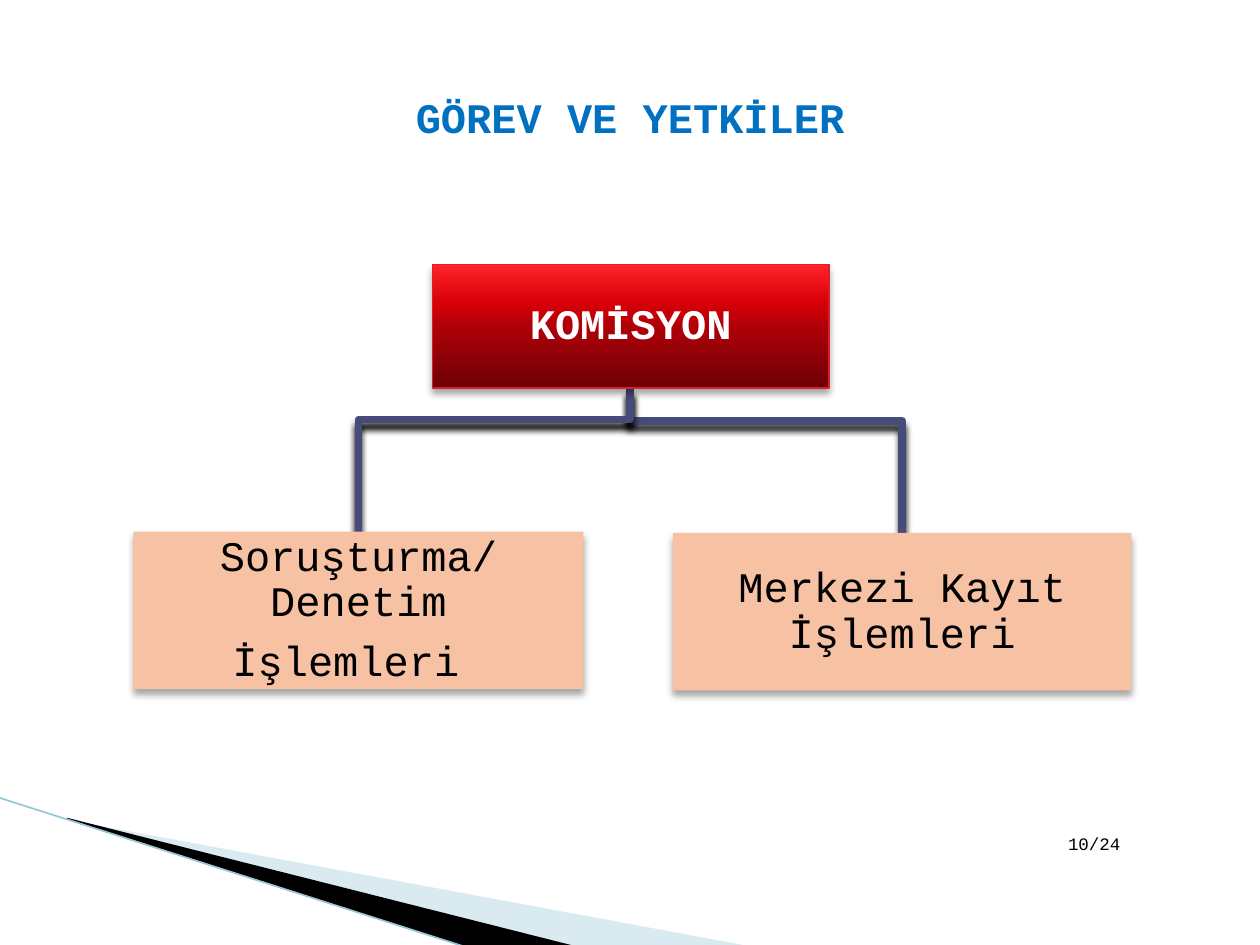
from dataclasses import dataclass

from lxml import etree
from pptx import Presentation
from pptx.dml.color import RGBColor
from pptx.enum.shapes import MSO_CONNECTOR, MSO_SHAPE
from pptx.enum.text import MSO_ANCHOR, PP_ALIGN
from pptx.oxml.ns import qn
from pptx.util import Inches, Pt

RECTANGLE = MSO_SHAPE.RECTANGLE
STRAIGHT = MSO_CONNECTOR.STRAIGHT
MIDDLE, BOTTOM = MSO_ANCHOR.MIDDLE, MSO_ANCHOR.BOTTOM
CENTER, RIGHT = PP_ALIGN.CENTER, PP_ALIGN.RIGHT
WIDTH, HEIGHT = Inches(10), Inches(7.5)


@dataclass(frozen=True)
class Theme:
    font: str = "Courier New"
    heading_size: int = 24
    number_size: int = 10
    ink: str = "000000"
    white: str = "FFFFFF"
    title: str = "0070C0"
    branch: str = "474B78"
    unit: str = "F7C1A4"
    root_edge: str = "DA1F28"
    root_stops: tuple = ((0, "6D0005"), (50, "B00008"), (70, "DA0008"), (100, "FF2429"))
    pale_wave: str = "A0CBDC"
    wave_edge: str = "97C5D8"


THEME = Theme()


def across(percent):
    return round(WIDTH * percent / 100)


def down(percent):
    return round(HEIGHT * percent / 100)


def place(left, top, width, height):
    return across(left), down(top), across(width), down(height)


def add_color(parent, color, alpha=100):
    node = etree.SubElement(parent, qn("a:srgbClr"), val=color)
    if alpha < 100:
        etree.SubElement(node, qn("a:alpha"), val=str(alpha * 1000))


def set_shadow(shape, alpha, distance):
    shape.shadow.inherit = False
    effects = shape._element.spPr.find(qn("a:effectLst"))
    shadow = etree.SubElement(
        effects, qn("a:outerShdw"), blurRad=str(Pt(4)), dist=str(Pt(distance)),
        dir="5400000", rotWithShape="0")
    add_color(shadow, THEME.ink, alpha)


def set_gradient(shape, stops):
    shape.fill.gradient()
    shape.fill.gradient_angle = 90
    stop_list = shape._element.spPr.find(qn("a:gradFill")).find(qn("a:gsLst"))
    for old_stop in list(stop_list):
        stop_list.remove(old_stop)
    for position, color in stops:
        stop = etree.SubElement(stop_list, qn("a:gs"), pos=str(position * 1000))
        add_color(stop, color)


def write(shape, lines, size=THEME.heading_size, color=THEME.ink, bold=False,
          align=CENTER, anchor=MIDDLE, margin=None, spacing=None, after=None):
    frame = shape.text_frame
    frame.word_wrap = True
    frame.vertical_anchor = anchor
    if margin is not None:
        frame.margin_left = frame.margin_right = Inches(margin)
        frame.margin_top = frame.margin_bottom = Inches(margin)
    for index, line in enumerate(lines):
        para = frame.add_paragraph() if index else frame.paragraphs[0]
        para.alignment = align
        para.line_spacing = spacing
        if after is not None:
            para.space_after = Pt(after)
        span = para.add_run()
        span.text = line
        span.font.name = THEME.font
        span.font.size = Pt(size)
        span.font.bold = bold
        span.font.color.rgb = RGBColor.from_string(color)


def add_label(page, area, text, **text_format):
    write(page.shapes.add_textbox(*place(*area)), [text], **text_format)


def add_unit(page, area, lines, fill=None, stops=None, edge=None, **text_format):
    box = page.shapes.add_shape(RECTANGLE, *place(*area))
    if stops:
        set_gradient(box, stops)
    else:
        box.fill.solid()
        box.fill.fore_color.rgb = RGBColor.from_string(fill)
    if edge:
        box.line.color.rgb = RGBColor.from_string(edge)
        box.line.width = Pt(0.75)
    else:
        box.line.fill.background()
    set_shadow(box, alpha=35, distance=3)
    write(box, lines, margin=0.02, spacing=0.9, after=8.4, **text_format)


def draw_outline(page, points, closed):
    corners = [(across(x), down(y)) for x, y in points]
    builder = page.shapes.build_freeform(*corners[0])
    builder.add_line_segments(corners[1:], close=closed)
    return builder.convert_to_shape()


def add_branch(page, points, alpha):
    branch = draw_outline(page, points, closed=False)
    branch.fill.background()
    branch.line.color.rgb = RGBColor.from_string(THEME.branch)
    branch.line.width = Pt(4.33)
    set_shadow(branch, alpha=alpha, distance=4)


def add_wave(page, points, color, alpha=100):
    wave = draw_outline(page, points, closed=True)
    wave.fill.solid()
    wave.fill.fore_color.rgb = RGBColor.from_string(color)
    wave.line.fill.background()
    wave.shadow.inherit = False
    if alpha < 100:
        node = wave._element.spPr.find(qn("a:solidFill")).find(qn("a:srgbClr"))
        etree.SubElement(node, qn("a:alpha"), val=str(alpha * 1000))


def add_wave_edge(page, start, end):
    edge = page.shapes.add_connector(
        STRAIGHT, across(start[0]), down(start[1]), across(end[0]), down(end[1]))
    edge.line.color.rgb = RGBColor.from_string(THEME.wave_edge)
    edge.line.width = Pt(0.95)
    etree.SubElement(edge._element.spPr, qn("a:effectLst"))


def main():
    deck = Presentation()
    deck.slide_width, deck.slide_height = WIDTH, HEIGHT
    page = deck.slides.add_slide(deck.slide_layouts[6])

    add_wave(page, [(5.5, 86.8), (59.5, 100.13), (45.6, 100.13), (5.5, 86.67)],
             THEME.pale_wave, alpha=40)
    add_wave(page, [(5.3, 86.53), (45.7, 100.13), (37.2, 100.27), (5.4, 86.67)],
             THEME.ink)
    add_wave_edge(page, (-0.1, 84.4), (37.1, 100.27))

    add_label(page, (81.5, 84.67, 8.4, 6.4), "10/24", size=THEME.number_size,
              align=RIGHT, anchor=BOTTOM)
    add_label(page, (5, 4, 90, 16.67), "GÖREV VE YETKİLER",
              color=THEME.title, bold=True)

    units = [
        ((53.4, 56.4, 36.4, 16.67), ["Merkezi Kayıt İşlemleri"], 44.53, 93),
        ((10.6, 56.27, 35.7, 16.67), ["Soruşturma/Denetim", "İşlemleri "], 44.4, 100),
    ]
    for (left, top, width, height), lines, turn, alpha in units:
        middle = left + width / 2
        add_branch(page, [(50, 41.2), (50, turn), (middle, turn), (middle, top)], alpha)
    add_unit(page, (34.3, 28, 31.5, 13.07), ["KOMİSYON"], stops=THEME.root_stops,
             edge=THEME.root_edge, color=THEME.white, bold=True)
    for area, lines, turn, alpha in reversed(units):
        add_unit(page, area, lines, fill=THEME.unit)

    deck.save("out.pptx")


if __name__ == "__main__":
    main()
